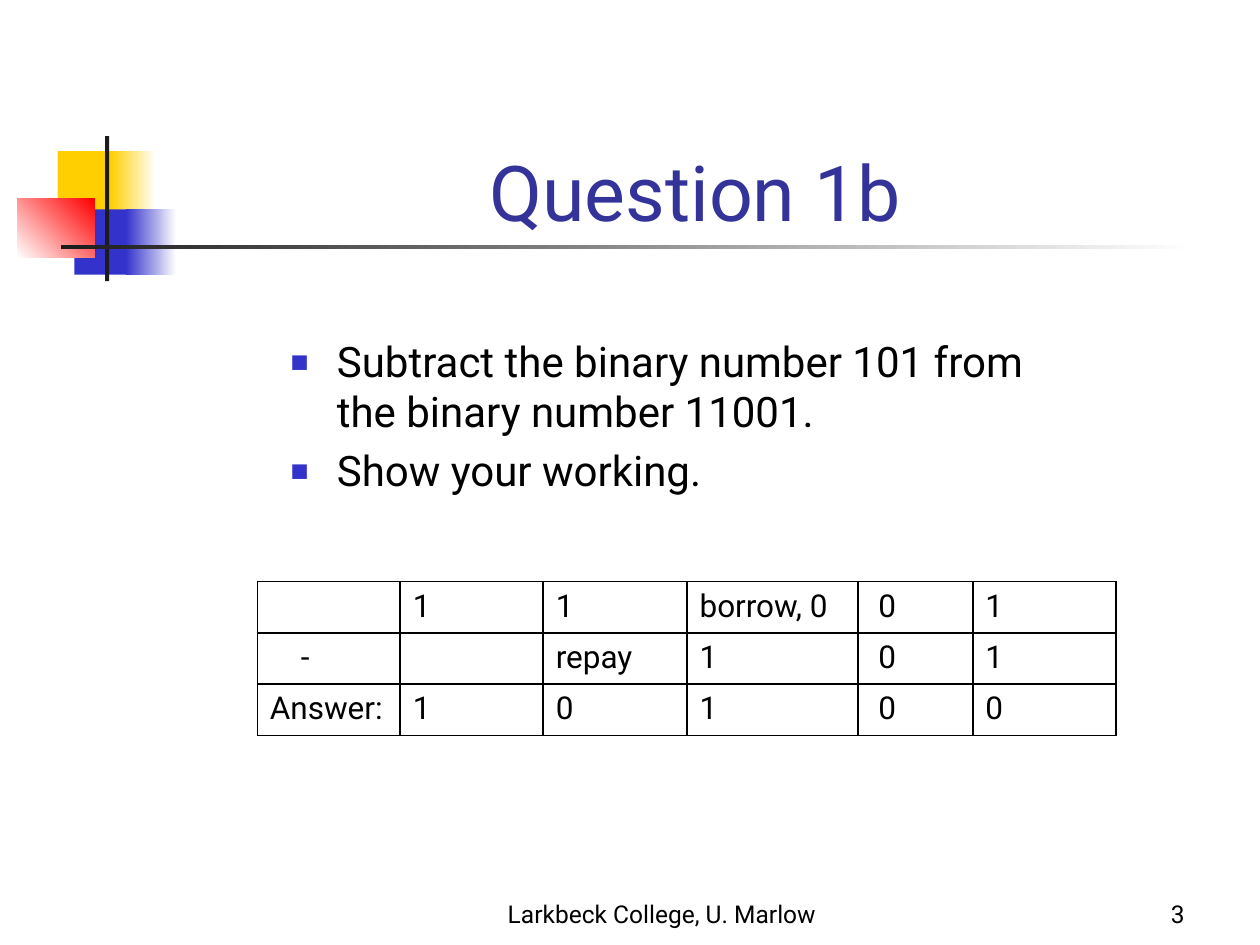
from lxml import etree
from pptx import Presentation
from pptx.dml.color import RGBColor
from pptx.enum.shapes import MSO_SHAPE
from pptx.enum.text import MSO_ANCHOR, PP_ALIGN
from pptx.oxml.ns import qn
from pptx.util import Pt

RECT = MSO_SHAPE.RECTANGLE
TOP, BOTTOM = MSO_ANCHOR.TOP, MSO_ANCHOR.BOTTOM
LEFT, CENTER, RIGHT = PP_ALIGN.LEFT, PP_ALIGN.CENTER, PP_ALIGN.RIGHT

FONT = "Roboto"
COLORS = {
    "yellow": "FFCF01", "blue": "3333CC", "red": "FF0000", "white": "FFFFFF",
    "dark": "1C1C1C", "title": "333399", "black": "000000",
}

ORNAMENT = [
    ((33, 86.4, 34.6, 37.4), ["yellow"], 0),
    ((63.2, 86.4, 25.9, 37.4), ["yellow", "white"], 0),
    ((42.5, 119.6, 33.1, 37.4), ["blue"], 0),
    ((72, 119.6, 28.8, 37.4), ["blue", "white"], 0),
    ((10, 113.7, 44.2, 33.5), ["white", "red"], 45),
    ((60, 77.8, 2.4, 82.8), ["dark"], 0),
    ((34.8, 140, 648, 2.6), ["dark", "white"], 0),
]
TEXTS = [
    ((90.7, 49, 613.4, 90), "Question 1b", 44, "title", CENTER),
    ((264.2, 498.2, 228.2, 36), "Larkbeck College, U. Marlow", 14, "black", CENTER),
    ((534.2, 498.2, 149.8, 36), "3", 14, "black", RIGHT),
]
BULLETS_BOX = (158.4, 188, 452.9, 116)
BULLETS = [
    "Subtract the binary number 101 from the binary number 11001.",
    "Show your working.",
]
TABLE_AT = (147, 332.4)
COL_WIDTHS = [81.7, 81.7, 82.2, 97.7, 65.7, 81.7]
ROW_HEIGHT = 29.3
ROWS = [
    ["", "1", "1", "borrow, 0", "0", "1"],
    ["-", "", "repay", "1", "0", "1"],
    ["Answer:", "1", "0", "1", "0", "0"],
]
CELL_INSET = 7.2
SIGN_INDENT, ZERO_INDENT, ZERO_COL = 17.8, 4.5, 4


def rgb(name):
    return RGBColor.from_string(COLORS[name])


def add_block(slide, box, colors, angle):
    s = slide.shapes.add_shape(RECT, *map(Pt, box))
    s.shadow.inherit = False
    s.line.fill.background()
    if len(colors) == 1:
        s.fill.solid()
        s.fill.fore_color.rgb = rgb(colors[0])
        return
    s.fill.gradient()
    s.fill.gradient_angle = angle
    for stop, position, color in zip(s.fill.gradient_stops, (0, 1), colors):
        stop.position = position
        stop.color.rgb = rgb(color)


def add_frame(slide, box, anchor):
    tf = slide.shapes.add_textbox(*map(Pt, box)).text_frame
    tf.word_wrap = True
    tf.vertical_anchor = anchor
    return tf


def write(p, text, size, color="black", align=LEFT):
    p.alignment = align
    r = p.add_run()
    r.text = text
    r.font.name = FONT
    r.font.size = Pt(size)
    r.font.color.rgb = rgb(color)


def add_bullet(p, indent, space):
    p.space_before = Pt(space)
    ppr = p._p.get_or_add_pPr()
    ppr.set("marL", str(Pt(indent)))
    ppr.set("indent", str(-Pt(indent)))
    color = etree.SubElement(ppr, qn("a:buClr"))
    etree.SubElement(color, qn("a:srgbClr"), val=COLORS["blue"])
    etree.SubElement(ppr, qn("a:buSzPct"), val="120000")
    etree.SubElement(ppr, qn("a:buFont"), typeface=FONT)
    etree.SubElement(ppr, qn("a:buChar"), char="▪")


def style_cell(cell):
    tcpr = cell._tc.get_or_add_tcPr()
    for side in ("lnL", "lnR", "lnT", "lnB"):
        line = etree.SubElement(tcpr, qn(f"a:{side}"), w=str(Pt(1)))
        fill = etree.SubElement(line, qn("a:solidFill"))
        etree.SubElement(fill, qn("a:srgbClr"), val=COLORS["black"])
    cell.fill.background()


def add_sum(slide):
    size = (sum(COL_WIDTHS), ROW_HEIGHT * len(ROWS))
    table = slide.shapes.add_table(
        len(ROWS), len(COL_WIDTHS), *map(Pt, TABLE_AT + size)).table
    table.first_row = table.horz_banding = False
    for column, width in zip(table.columns, COL_WIDTHS):
        column.width = Pt(width)
    for i, values in enumerate(ROWS):
        table.rows[i].height = Pt(ROW_HEIGHT)
        for j, value in enumerate(values):
            cell = table.cell(i, j)
            style_cell(cell)
            indent = SIGN_INDENT if value == "-" else ZERO_INDENT if j == ZERO_COL else 0
            cell.margin_left = Pt(CELL_INSET + indent)
            if value:
                write(cell.text_frame.paragraphs[0], value, 18)


def main():
    prs = Presentation()
    prs.slide_width, prs.slide_height = Pt(720), Pt(540)
    slide = prs.slides.add_slide(prs.slide_layouts[6])
    for box, colors, angle in ORNAMENT:
        add_block(slide, box, colors, angle)
    for box, text, size, color, align in TEXTS:
        write(add_frame(slide, box, BOTTOM).paragraphs[0], text, size, color, align)
    tf = add_frame(slide, BULLETS_BOX, TOP)
    for i, text in enumerate(BULLETS):
        p = tf.add_paragraph() if i else tf.paragraphs[0]
        write(p, text, 24)
        add_bullet(p, 27, 4.8)
    add_sum(slide)
    prs.save("out.pptx")


if __name__ == "__main__":
    main()
